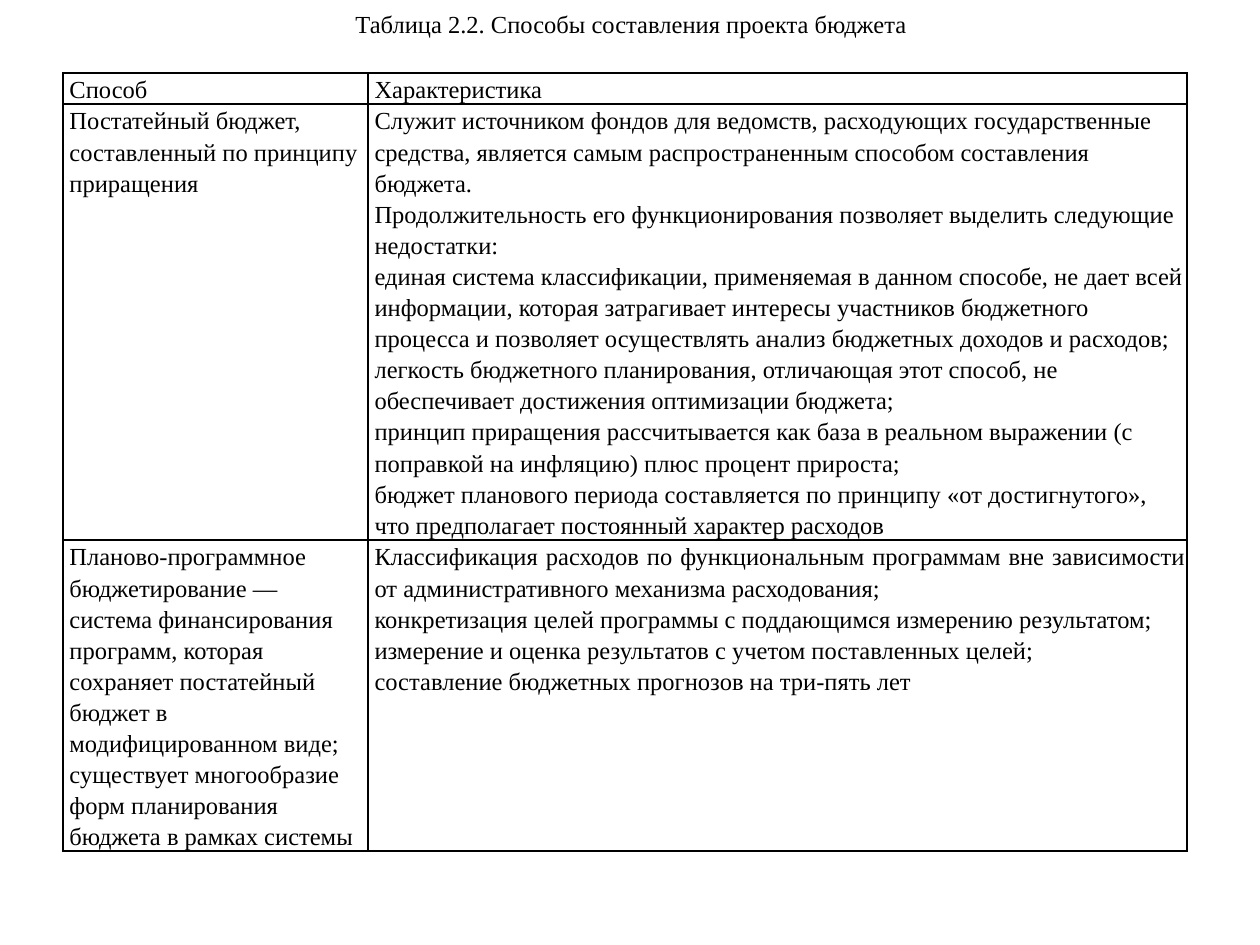
from lxml import etree
from pptx import Presentation
from pptx.dml.color import RGBColor
from pptx.enum.text import MSO_ANCHOR, PP_ALIGN
from pptx.oxml.ns import qn
from pptx.util import Cm, Pt

LEFT, CENTER, JUSTIFY = PP_ALIGN.LEFT, PP_ALIGN.CENTER, PP_ALIGN.JUSTIFY
MIDDLE = MSO_ANCHOR.MIDDLE
TITLE_ONLY = 5
BLACK, WHITE = "000000", "FFFFFF"

TITLE = "Таблица 2.2. Способы составления проекта бюджета"
COLUMN_WIDTHS = [6.15, 16.51]
ROW_HEIGHTS = [0.62, 8.79, 6.27]

# Each cell is a list of (text, alignment) paragraphs.
ROWS = [
    [
        [("Способ", LEFT)],
        [("Характеристика", LEFT)],
    ],
    [
        [("Постатейный бюджет, составленный по принципу приращения", LEFT)],
        [
            ("Служит источником фондов для ведомств, расходующих государственные "
             "средства, является самым распространенным способом составления бюджета.", LEFT),
            ("Продолжительность его функционирования позволяет выделить следующие "
             "недостатки:", LEFT),
            ("единая система классификации, применяемая в данном способе, не дает всей "
             "информации, которая затрагивает интересы участников бюджетного процесса "
             "и позволяет осуществлять анализ бюджетных доходов и расходов;", LEFT),
            ("легкость бюджетного планирования, отличающая этот способ, не обеспечивает "
             "достижения оптимизации бюджета;", LEFT),
            ("принцип приращения рассчитывается как база в реальном выражении "
             "(с поправкой на инфляцию) плюс процент прироста;", LEFT),
            ("бюджет планового периода составляется по принципу «от достигнутого», "
             "что предполагает постоянный характер расходов", LEFT),
        ],
    ],
    [
        [("Планово-программное бюджетирование — система финансирования программ, "
          "которая сохраняет постатейный бюджет в модифицированном виде; существует "
          "многообразие форм планирования бюджета в рамках системы", LEFT)],
        [
            ("Классификация расходов по функциональным программам вне зависимости "
             "от административного механизма расходования;", JUSTIFY),
            ("конкретизация целей программы с поддающимся измерению результатом;", JUSTIFY),
            ("измерение и оценка результатов с учетом поставленных целей;", JUSTIFY),
            ("составление бюджетных прогнозов на три-пять лет", LEFT),
        ],
    ],
]


def color(value):
    return RGBColor.from_string(value)


class SlideBuilder:
    font_name = "Times New Roman"
    font_size = Pt(14)
    line_spacing = 1.15
    border_width = Pt(1)

    def __init__(self, slide):
        self.slide = slide

    def add_run(self, paragraph, text):
        run = paragraph.add_run()
        run.text = text
        run.font.name = self.font_name
        run.font.size = self.font_size
        run.font.color.rgb = color(BLACK)

    def set_title(self, text, left, top, width, height):
        title = self.slide.shapes.title
        title.left, title.top = Cm(left), Cm(top)
        title.width, title.height = Cm(width), Cm(height)
        title.text_frame.vertical_anchor = MIDDLE
        paragraph = title.text_frame.paragraphs[0]
        paragraph.alignment = CENTER
        self.add_run(paragraph, text)

    def add_table(self, rows, left, top, column_widths, row_heights):
        frame = self.slide.shapes.add_table(
            len(rows), len(column_widths), Cm(left), Cm(top),
            Cm(sum(column_widths)), Cm(sum(row_heights)))
        table = frame.table
        table.first_row = table.horz_banding = False
        for column, width in zip(table.columns, column_widths):
            column.width = Cm(width)
        for row, height, contents in zip(table.rows, row_heights, rows):
            row.height = Cm(height)
            for cell, paragraphs in zip(row.cells, contents):
                self.fill_cell(cell, paragraphs)

    def fill_cell(self, cell, paragraphs):
        cell.margin_left = cell.margin_right = Cm(0.03)
        cell.margin_top = cell.margin_bottom = 0
        self.add_borders(cell)
        cell.fill.solid()
        cell.fill.fore_color.rgb = color(WHITE)
        text_frame = cell.text_frame
        for index, (text, alignment) in enumerate(paragraphs):
            paragraph = text_frame.add_paragraph() if index else text_frame.paragraphs[0]
            paragraph.alignment = alignment
            paragraph.line_spacing = self.line_spacing
            paragraph.space_after = Pt(10 if len(paragraphs) == 1 else 0)
            properties = paragraph._p.get_or_add_pPr()
            properties.set("marL", str(Cm(0.1)))
            properties.set("indent", "0")
            self.add_run(paragraph, text)

    def add_borders(self, cell):
        properties = cell._tc.get_or_add_tcPr()
        for side in ("a:lnL", "a:lnR", "a:lnT", "a:lnB"):
            line = etree.SubElement(properties, qn(side), w=str(self.border_width))
            fill = etree.SubElement(line, qn("a:solidFill"))
            etree.SubElement(fill, qn("a:srgbClr"), val=BLACK)


def main():
    presentation = Presentation()
    presentation.slide_width, presentation.slide_height = Cm(25.4), Cm(19.05)
    slide = presentation.slides.add_slide(presentation.slide_layouts[TITLE_ONLY])
    builder = SlideBuilder(slide)
    builder.add_table(ROWS, 1.27, 1.47, COLUMN_WIDTHS, ROW_HEIGHTS)
    builder.set_title(TITLE, 3.38, 0, 18.69, 0.94)
    presentation.save("out.pptx")


if __name__ == "__main__":
    main()
